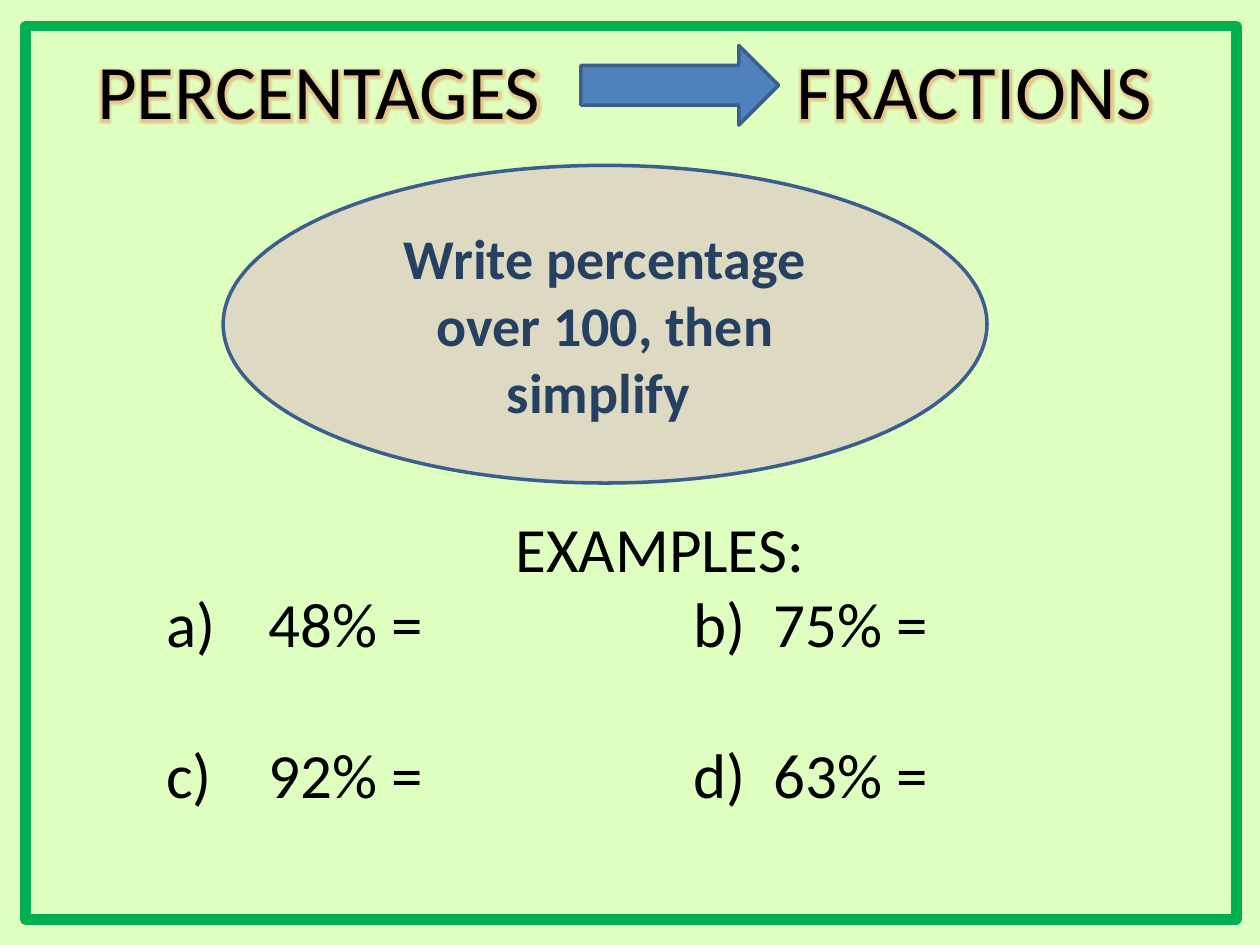
from dataclasses import dataclass

from lxml.etree import SubElement
from pptx import Presentation
from pptx.dml.color import RGBColor as Rgb
from pptx.enum.shapes import MSO_SHAPE as Kind
from pptx.enum.text import MSO_ANCHOR as Anchor, PP_ALIGN as Align
from pptx.oxml.ns import qn
from pptx.util import Pt


@dataclass(frozen=True)
class Theme:
    font: str = "Calibri"
    page: str = "DFFFC0"
    frame: str = "00B050"
    ink: str = "000000"
    glow: str = "F0703C"
    arrow: str = "4F81BD"
    edge: str = "3A5F8C"
    oval: str = "DDD9C3"
    navy: str = "254061"
    title: int = 44
    body: int = 36
    rule: int = 32


LOOK = Theme()


def put(obj, form):
    for name, value in form.items():
        setattr(obj, name, value)


def add_form(slide, kind, box, fill, edge, width):
    form = slide.shapes.add_shape(kind, *map(Pt, box))
    form.shadow.inherit = False
    if fill:
        form.fill.solid()
        form.fill.fore_color.rgb = Rgb.from_string(fill)
    else:
        form.fill.background()
    form.line.color.rgb = Rgb.from_string(edge)
    form.line.width = Pt(width)
    return form


def write(para, text, size, color, align=Align.LEFT, bold=False):
    para.alignment = align
    run = para.add_run()
    run.text = text
    put(run.font, {"name": LOOK.font, "size": Pt(size), "bold": bold})
    run.font.color.rgb = Rgb.from_string(color)
    return run


def add_text(slide, box, wrap=True):
    frame = slide.shapes.add_textbox(*map(Pt, box)).text_frame
    frame.word_wrap = wrap
    return frame


def add_glow(run, radius):
    """Put a soft halo behind the letters of a run."""
    props = run.font._element
    effects = SubElement(props, qn("a:effectLst"))
    props.find(qn("a:solidFill")).addnext(effects)
    glow = SubElement(effects, qn("a:glow"), rad=str(Pt(radius)))
    color = SubElement(glow, qn("a:srgbClr"), val=LOOK.glow)
    SubElement(color, qn("a:alpha"), val="40000")


def set_tabs(para, stops):
    tabs = SubElement(para._p.get_or_add_pPr(), qn("a:tabLst"))
    for stop in stops:
        SubElement(tabs, qn("a:tab"), pos=str(Pt(stop)), algn="l")


def add_head(slide, box, words):
    """Two glowing words with an arrow between them."""
    left, top, width, height = box
    gap = 399.5
    for word, start, room in zip(words, (0, gap), (271, width - gap)):
        frame = add_text(slide, (left + start, top, room, height), False)
        add_glow(write(frame.paragraphs[0], word, LOOK.title, LOOK.ink), 5)
    add_form(slide, Kind.RIGHT_ARROW, (left + 283.5, top + 5, 113, 45.5),
             LOOK.arrow, LOOK.edge, 2)


def add_rule(slide, box, text):
    oval = add_form(slide, Kind.OVAL, box, LOOK.oval, LOOK.edge, 2)
    put(oval.text_frame, {"word_wrap": True, "vertical_anchor": Anchor.MIDDLE})
    write(oval.text_frame.paragraphs[0], text, LOOK.rule, LOOK.navy,
          Align.CENTER, True)


def add_tasks(slide, box, title, rows):
    frame = add_text(slide, box)
    write(frame.paragraphs[0], title, LOOK.body, LOOK.ink, Align.CENTER)
    for index, row in enumerate(rows):
        para = frame.add_paragraph()
        para.space_before = Pt(index * 43)
        write(para, "\t".join(row), LOOK.body, LOOK.ink)
        set_tabs(para, (58.5, 301, 347))


def main():
    deck = Presentation()
    put(deck, {"slide_width": Pt(720), "slide_height": Pt(540)})
    slide = deck.slides.add_slide(deck.slide_layouts[6])
    slide.background.fill.solid()
    slide.background.fill.fore_color.rgb = Rgb.from_string(LOOK.page)

    add_head(slide, (48.5, 21, 646.5, 60.5), ("PERCENTAGES", "FRACTIONS"))
    add_form(slide, Kind.RECTANGLE, (14.5, 15, 692, 510.5),
             None, LOOK.frame, 6)
    add_rule(slide, (127.5, 94.5, 436.5, 181.5),
             "Write percentage over 100, then simplify ")
    add_tasks(slide, (88, 287.5, 578, 181.5), "EXAMPLES:", (
        ("a)", "48% =", "b)", "75% ="),
        ("c)", "92% =", "d)", "63% ="),
    ))
    deck.save("out.pptx")


if __name__ == "__main__":
    main()
